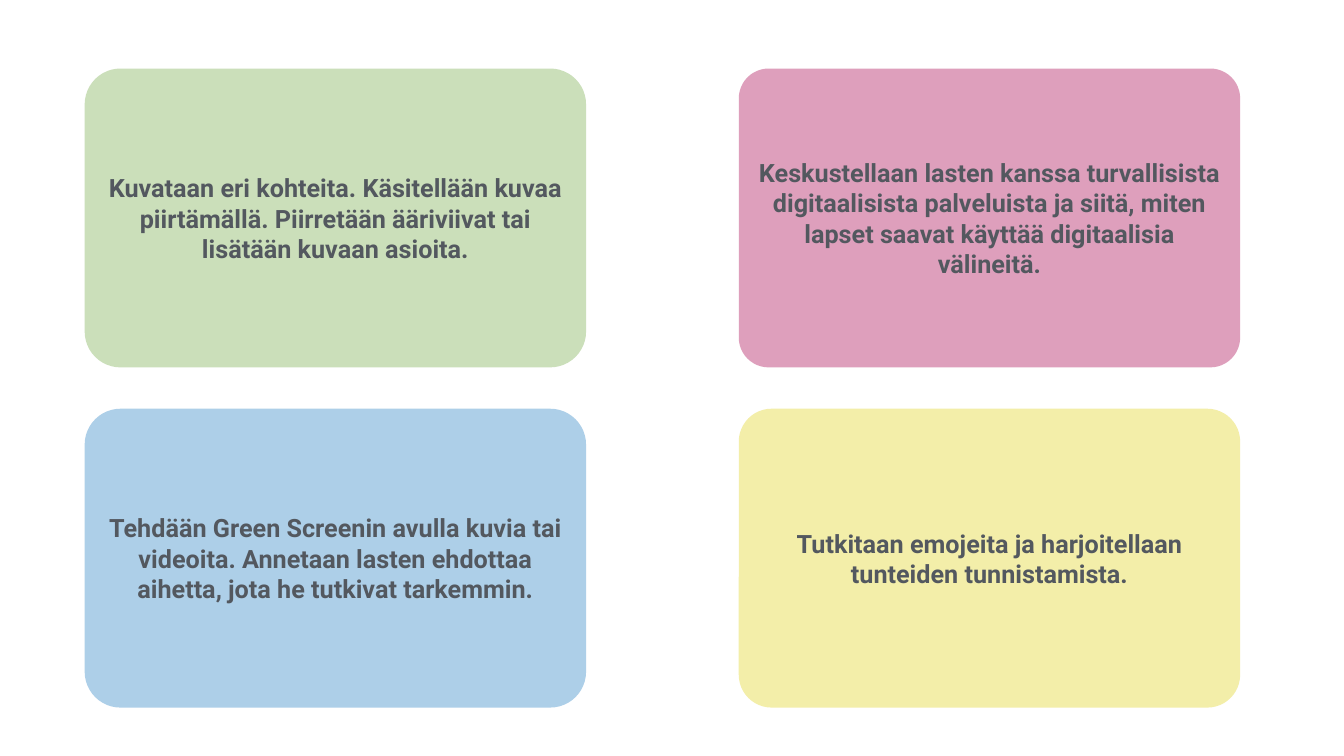
import pptx
import pptx.util
import pptx.dml.color
import pptx.enum.shapes
import pptx.enum.text

RGBColor = pptx.dml.color.RGBColor
Inches = pptx.util.Inches

GREEN = RGBColor(0xCB, 0xDF, 0xBA)
PINK = RGBColor(0xDE, 0x9F, 0xBC)
BLUE = RGBColor(0xAD, 0xCF, 0xE8)
YELLOW = RGBColor(0xF3, 0xEE, 0xA9)
GREY = RGBColor(0x53, 0x58, 0x5F)

# Rows of cards: text, fill, corner rounding
CARDS = [
    [
        ("Kuvataan eri kohteita. Käsitellään kuvaa piirtämällä. "
         "Piirretään ääriviivat tai lisätään kuvaan asioita.", GREEN, 0.12),
        ("Keskustellaan lasten kanssa turvallisista digitaalisista palveluista "
         "ja siitä, miten lapset saavat käyttää digitaalisia välineitä.", PINK, 0.1),
    ],
    [
        ("Tehdään Green Screenin avulla kuvia tai videoita. Annetaan lasten "
         "ehdottaa aihetta, jota he tutkivat tarkemmin.", BLUE, 0.12),
        ("Tutkitaan emojeita ja harjoitellaan tunteiden tunnistamista.", YELLOW, 0.11),
    ],
]

SLIDE_W, SLIDE_H = 26.67, 15
LEFT, TOP = 1.68, 1.36
CARD_W, CARD_H = 9.95, 5.93
COL_STEP, ROW_STEP = 12.98, 6.75

FRAME = {
    "word_wrap": True,
    "vertical_anchor": pptx.enum.text.MSO_ANCHOR.MIDDLE,
    **{f"margin_{side}": Inches(0.06) for side in ("left", "top", "right", "bottom")},
}
FONT = {"name": "Roboto", "size": pptx.util.Pt(36), "bold": True}


def set_attributes(target, values):
    for name, value in values.items():
        setattr(target, name, value)


def add_card(slide, col, row, text, fill, rounding):
    sp = slide.shapes.add_shape(
        pptx.enum.shapes.MSO_SHAPE.ROUNDED_RECTANGLE,
        Inches(LEFT + col * COL_STEP), Inches(TOP + row * ROW_STEP),
        Inches(CARD_W), Inches(CARD_H))
    sp.adjustments[0] = rounding
    sp.shadow.inherit = False
    sp.fill.solid()
    sp.fill.fore_color.rgb = fill
    sp.line.fill.background()
    tf = sp.text_frame
    set_attributes(tf, FRAME)
    p = tf.paragraphs[0]
    p.alignment = pptx.enum.text.PP_ALIGN.CENTER
    r = p.add_run()
    r.text = text
    set_attributes(r.font, FONT)
    r.font.color.rgb = GREY


prs = pptx.Presentation()
prs.slide_width, prs.slide_height = Inches(SLIDE_W), Inches(SLIDE_H)
s = prs.slides.add_slide(prs.slide_layouts[6])
for row, cards in enumerate(CARDS):
    for col, card in enumerate(cards):
        add_card(s, col, row, *card)
prs.save("out.pptx")
